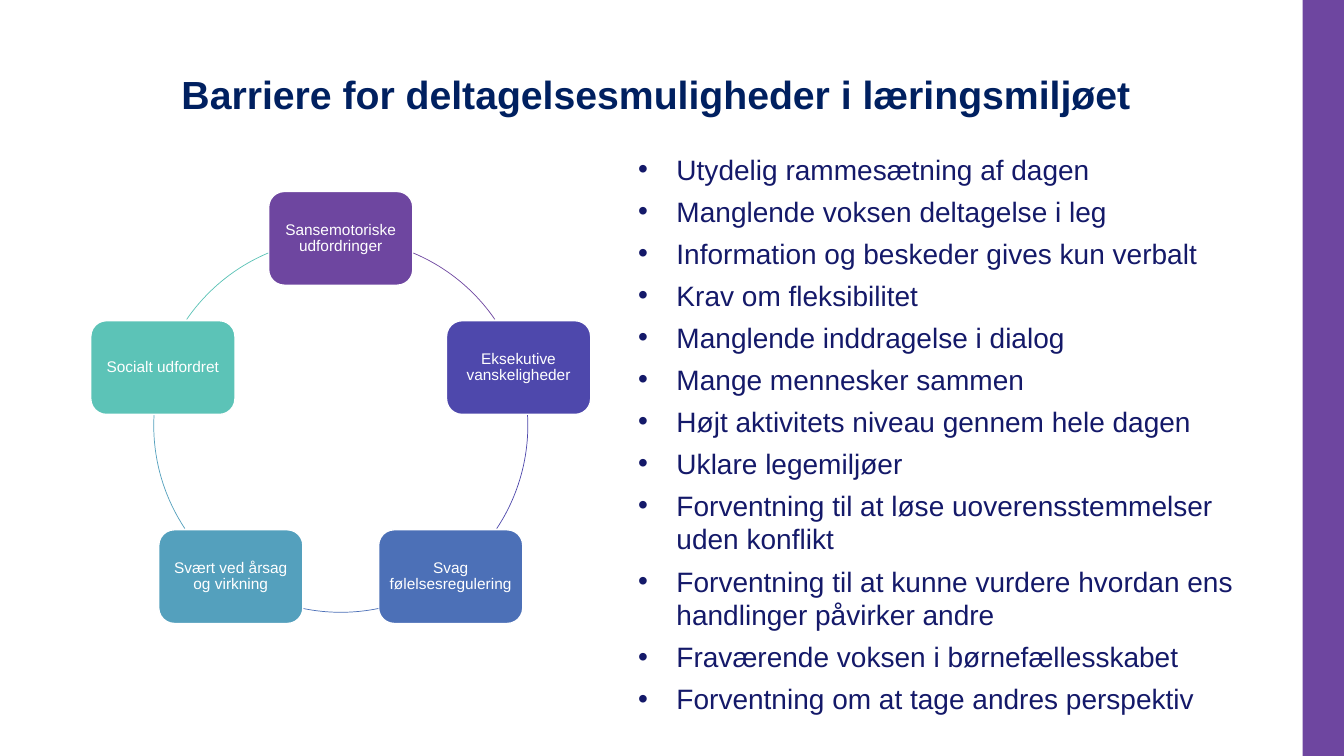
from math import cos, sin, radians
from pptx import Presentation
from pptx.dml.color import RGBColor
from pptx.enum.shapes import MSO_SHAPE
from pptx.enum.text import MSO_ANCHOR, PP_ALIGN
from pptx.oxml.ns import qn
from pptx.util import Inches, Pt
from lxml.etree import SubElement

PURPLE = RGBColor(0x6E, 0x46, 0xA0)
INDIGO = RGBColor(0x4E, 0x48, 0xAC)
BLUE = RGBColor(0x4C, 0x70, 0xB7)
SKY = RGBColor(0x54, 0xA0, 0xBD)
TEAL = RGBColor(0x5C, 0xC3, 0xB7)
WHITE = RGBColor(0xFF, 0xFF, 0xFF)
NAVY = RGBColor(0x00, 0x20, 0x60)
INK = RGBColor(0x14, 0x19, 0x69)

deck = Presentation()
deck.slide_width, deck.slide_height = Inches(13.33), Inches(7.5)
slide = deck.slides.add_slide(deck.slide_layouts[6])


def add_part(kind, left, top, width, height):
    part = slide.shapes.add_shape(
        kind, Inches(left), Inches(top), Inches(width), Inches(height))
    part.shadow.inherit = False
    return part


def set_text(frame, lines, inset, color, font, para):
    frame.word_wrap = True
    for side in ("left", "top", "right", "bottom"):
        setattr(frame, f"margin_{side}", Inches(inset))
    for i, line in enumerate(lines):
        p = frame.paragraphs[0] if i == 0 else frame.add_paragraph()
        run = p.add_run()
        run.text = line
        for key, value in para.items():
            setattr(p, key, value)
        for key, value in {"name": "Arial", **font}.items():
            setattr(run.font, key, value)
        run.font.color.rgb = color


# Side band
band = add_part(MSO_SHAPE.RECTANGLE, 12.92, 0, 0.41, 7.5)
band.fill.solid()
band.fill.fore_color.rgb = PURPLE
band.line.fill.background()

# Cycle: label, colour, start and end angle of the arc that follows
MID_X, MID_Y, RADIUS = 3.38, 4.22, 1.855
BOX_W, BOX_H = 1.43, 0.93
nodes = [
    ("Sansemotoriske udfordringer", PURPLE, 292.8, 325.5),
    ("Eksekutive vanskeligheder", INDIGO, 356.9, 33.5),
    ("Svag følelsesregulering", BLUE, 78.4, 101.6),
    ("Svært ved årsag og virkning", SKY, 146.5, 183.1),
    ("Socialt udfordret", TEAL, 214.5, 247.2),
]
for i, (label, color, start, end) in enumerate(nodes):
    turn = radians(360 / len(nodes) * i - 90)
    x = MID_X + RADIUS * cos(turn)
    y = MID_Y + RADIUS * sin(turn)
    box = add_part(MSO_SHAPE.ROUNDED_RECTANGLE,
                   x - BOX_W / 2, y - BOX_H / 2, BOX_W, BOX_H)
    box.fill.solid()
    box.fill.fore_color.rgb = color
    box.line.color.rgb = WHITE
    box.line.width = Pt(1)
    box.text_frame.vertical_anchor = MSO_ANCHOR.MIDDLE
    set_text(box.text_frame, [label], 0.05, WHITE, {"size": Pt(11)},
             {"alignment": PP_ALIGN.CENTER, "line_spacing": 0.9})

    arc = add_part(MSO_SHAPE.ARC, MID_X - RADIUS, MID_Y - RADIUS,
                   2 * RADIUS, 2 * RADIUS)
    # Angles are stored in 1/60000 degree, adjustments in 1/100000
    arc.adjustments[0] = start * 0.6
    arc.adjustments[1] = end * 0.6
    arc.fill.background()
    arc.line.color.rgb = color
    arc.line.width = Pt(0.5)

# Bullet list
points = [
    "Utydelig rammesætning af dagen",
    "Manglende voksen deltagelse i leg",
    "Information og beskeder gives kun verbalt",
    "Krav om fleksibilitet",
    "Manglende inddragelse i dialog",
    "Mange mennesker sammen",
    "Højt aktivitets niveau gennem hele dagen",
    "Uklare legemiljøer",
    "Forventning til at løse uoverensstemmelser uden konflikt",
    "Forventning til at kunne vurdere hvordan ens handlinger påvirker andre",
    "Fraværende voksen i børnefællesskabet",
    "Forventning om at tage andres perspektiv",
]
body = slide.shapes.add_textbox(
    Inches(6.33), Inches(1.51), Inches(6.1), Inches(5.64)).text_frame
set_text(body, points, 0, INK, {"size": Pt(20)}, {"space_after": Pt(6)})
for p in body.paragraphs:
    props = p._p.get_or_add_pPr()
    props.set("marL", str(Inches(0.38)))
    props.set("indent", str(-Inches(0.38)))
    SubElement(props, qn("a:buFont")).set("typeface", "Arial")
    SubElement(props, qn("a:buChar")).set("char", "•")

# Title
title = slide.shapes.add_textbox(
    Inches(1.8), Inches(0.75), Inches(9.85), Inches(0.59)).text_frame
set_text(title, ["Barriere for deltagelsesmuligheder i læringsmiljøet"], 0,
         NAVY, {"size": Pt(28), "bold": True}, {"line_spacing": 0.9})

deck.save("out.pptx")
